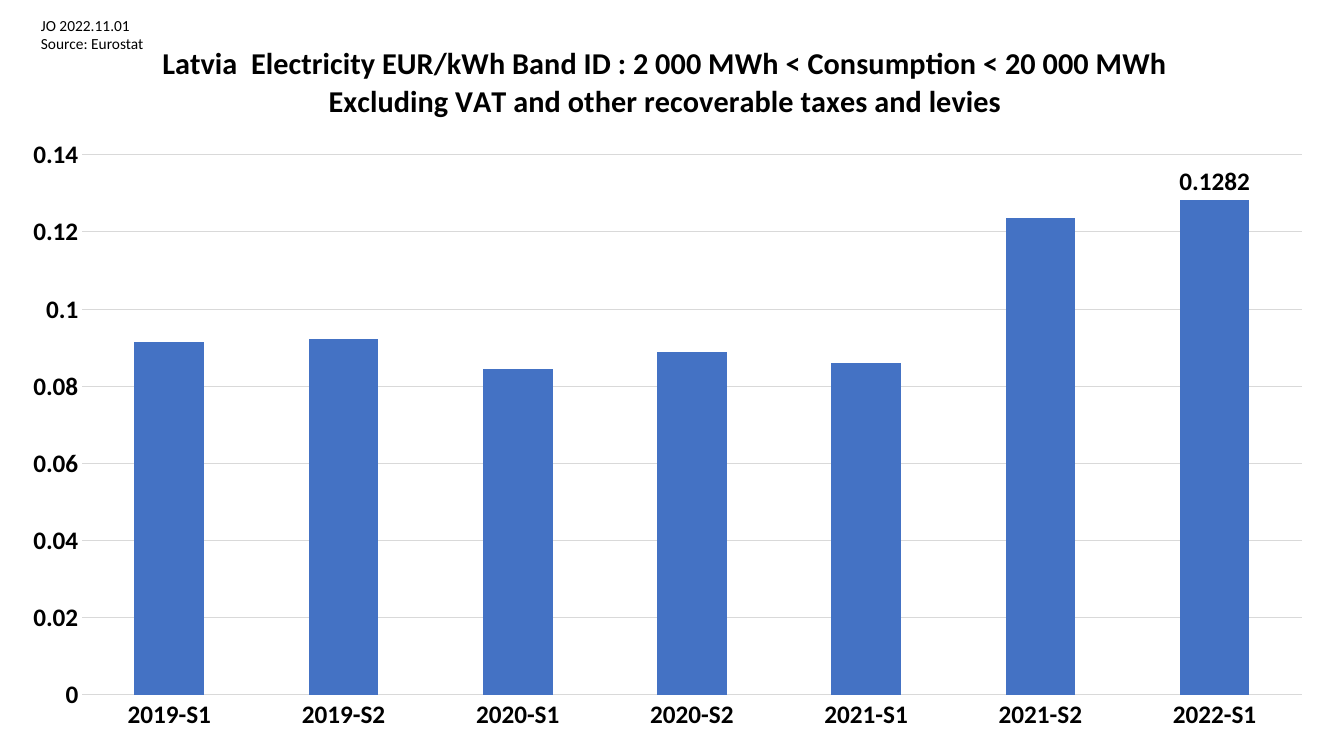
from lxml import etree
from pptx import Presentation
from pptx.chart.data import CategoryChartData
from pptx.dml.color import RGBColor
from pptx.enum.chart import XL_CHART_TYPE, XL_LABEL_POSITION, XL_TICK_MARK
from pptx.oxml.ns import qn
from pptx.util import Emu, Pt

COLUMNS = XL_CHART_TYPE.COLUMN_CLUSTERED
OUTSIDE_END = XL_LABEL_POSITION.OUTSIDE_END
NO_TICKS = XL_TICK_MARK.NONE

EMU_PER_PX = 914400 / 100.8
FONT = "Calibri"
BLACK, GRID_GREY, BAR_BLUE = "000000", "D9D9D9", "4472C4"

TITLE_LINES = [
    "Latvia  Electricity EUR/kWh Band ID : 2 000 MWh < Consumption < 20 000 MWh",
    "Excluding VAT and other recoverable taxes and levies",
]
PRICES = {
    "2019-S1": 0.0915,
    "2019-S2": 0.0922,
    "2020-S1": 0.0845,
    "2020-S2": 0.0888,
    "2021-S1": 0.0861,
    "2021-S2": 0.1237,
    "2022-S1": 0.1282,
}


def px(length):
    return Emu(round(length * EMU_PER_PX))


def color(hex_string):
    return RGBColor.from_string(hex_string)


def set_font(font, size, bold=False):
    font.name = FONT
    font.size = Pt(size)
    font.bold = bold
    font.color.rgb = color(BLACK)


def set_line(line):
    line.color.rgb = color(GRID_GREY)
    line.width = Pt(0.75)


def set_layout(parent, index, **settings):
    """Place a chart part by hand, in fractions of the chart's size."""
    for old_layout in parent.findall(qn("c:layout")):
        parent.remove(old_layout)
    layout = etree.Element(qn("c:layout"))
    manual = etree.SubElement(layout, qn("c:manualLayout"))
    for name, value in settings.items():
        etree.SubElement(manual, qn(f"c:{name}")).set("val", str(value))
    parent.insert(index, layout)


def add_title(chart):
    text_frame = chart.chart_title.text_frame
    text_frame.text = "\n".join(TITLE_LINES)
    for paragraph in text_frame.paragraphs:
        set_font(paragraph.font, 21.6, bold=True)
    chart.chart_title.include_in_layout = False
    title = chart.element.find(f".//{qn('c:title')}")
    set_layout(title, 1, xMode="edge", yMode="edge", x=0.12, y=0.04)


def format_axes(chart):
    category_axis, value_axis = chart.category_axis, chart.value_axis
    for axis in (category_axis, value_axis):
        axis.major_tick_mark = axis.minor_tick_mark = NO_TICKS
        set_font(axis.tick_labels.font, 18, bold=True)
    set_line(category_axis.format.line)
    value_axis.format.line.fill.background()
    set_line(value_axis.major_gridlines.format.line)
    value_axis.minimum_scale = 0
    value_axis.maximum_scale = 0.14
    value_axis.major_unit = 0.02
    value_axis.tick_labels.number_format = "General"
    value_axis.tick_labels.number_format_is_linked = False


def format_bars(chart):
    plot = chart.plots[0]
    plot.gap_width = 150
    plot.vary_by_categories = False
    series = plot.series[0]
    series.format.fill.solid()
    series.format.fill.fore_color.rgb = color(BAR_BLUE)
    series.data_labels.show_value = False
    latest_label = series.points[len(PRICES) - 1].data_label
    set_font(latest_label.font, 18, bold=True)
    latest_label.position = OUTSIDE_END


def add_price_chart(slide, left, top, width, height):
    data = CategoryChartData()
    data.categories = list(PRICES)
    data.add_series(" ".join(TITLE_LINES), PRICES.values())
    chart = slide.shapes.add_chart(
        COLUMNS, px(left), px(top), px(width), px(height), data
    ).chart
    set_font(chart.font, 18, bold=True)
    chart.has_legend = False
    add_title(chart)
    format_axes(chart)
    format_bars(chart)
    plot_area = chart.element.find(f".//{qn('c:plotArea')}")
    set_layout(plot_area, 0, layoutTarget="inner", xMode="edge", yMode="edge",
               x=0.062, y=0.196, w=0.919, h=0.736)


def add_note(slide, left, top, width, height, lines):
    text_box = slide.shapes.add_textbox(px(left), px(top), px(width), px(height))
    text_frame = text_box.text_frame
    text_frame.word_wrap = True
    text_frame.text = "\n".join(lines)
    for paragraph in text_frame.paragraphs:
        set_font(paragraph.font, 11)


def main():
    presentation = Presentation()
    presentation.slide_width, presentation.slide_height = px(1344), px(756)
    slide = presentation.slides.add_slide(presentation.slide_layouts[6])
    add_price_chart(slide, 0, 11, 1327, 734)
    add_note(slide, 31, 11, 269, 80, ["JO 2022.11.01", "Source: Eurostat"])
    presentation.save("out.pptx")


if __name__ == "__main__":
    main()
